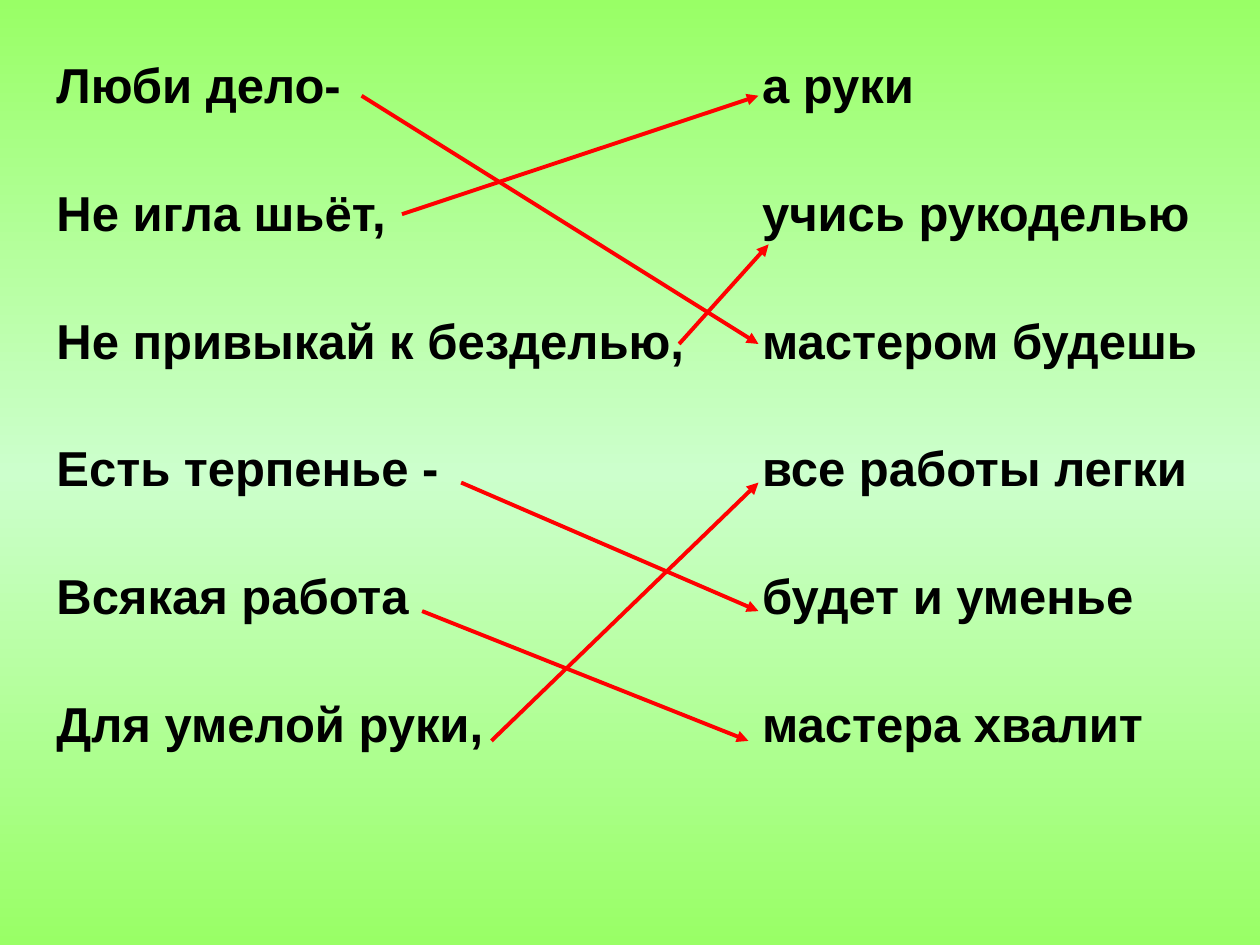
from dataclasses import dataclass

from lxml.etree import SubElement
from pptx import Presentation
from pptx.dml.color import RGBColor
from pptx.enum.shapes import MSO_CONNECTOR
from pptx.oxml.ns import qn
from pptx.slide import Slide
from pptx.util import Inches, Pt


@dataclass(frozen=True)
class Theme:
    font: str = "Arial"
    text_size: float = 28
    text: str = "000000"
    arrow: str = "FF0000"
    arrow_width: float = 2.25
    edge: str = "99FF66"
    middle: str = "CCFFCC"


@dataclass(frozen=True)
class Proverb:
    beginning: str
    ending: str


@dataclass(frozen=True)
class Match:
    start: tuple[float, float]
    end: tuple[float, float]


THEME = Theme()
ENDING_TAB = 5.6
ROW_GAP = 42.7

PROVERBS = [
    Proverb("Люби дело-", "а руки"),
    Proverb("Не игла шьёт,", "учись рукоделью"),
    Proverb("Не привыкай к безделью,", "мастером будешь"),
    Proverb("Есть терпенье -", "все работы легки"),
    Proverb("Всякая работа", "будет и уменье"),
    Proverb("Для умелой руки,", "мастера хвалит"),
]

MATCHES = [
    Match((2.87, 0.76), (6.02, 2.73)),
    Match((3.9, 5.88), (6.02, 3.83)),
    Match((3.35, 4.85), (5.94, 5.88)),
    Match((3.66, 3.83), (6.02, 4.85)),
    Match((3.19, 1.7), (6.02, 0.76)),
    Match((5.39, 2.73), (6.1, 1.94)),
]


def paint_background(slide: Slide) -> None:
    fill = slide.background.fill
    fill.gradient()
    fill.gradient_angle = 270
    stops = slide.element.find(".//" + qn("a:gsLst"))
    for stop in list(stops):
        stops.remove(stop)
    for percent, color in ((0, THEME.edge), (50, THEME.middle), (100, THEME.edge)):
        stop = SubElement(stops, qn("a:gs"), pos=str(percent * 1000))
        SubElement(stop, qn("a:srgbClr"), val=color)


def write_proverbs(slide: Slide, proverbs: list[Proverb]) -> None:
    box = slide.shapes.add_textbox(Inches(0.35), Inches(0.44), Inches(9.34), Inches(6.46))
    frame = box.text_frame
    frame.word_wrap = True
    for row, proverb in enumerate(proverbs):
        paragraph = frame.add_paragraph() if row else frame.paragraphs[0]
        paragraph.text = f"{proverb.beginning}\t{proverb.ending}"
        paragraph.line_spacing = 0.9
        if row:
            paragraph.space_before = Pt(ROW_GAP)
        tabs = SubElement(paragraph._p.get_or_add_pPr(), qn("a:tabLst"))
        SubElement(tabs, qn("a:tab"), pos=str(Inches(ENDING_TAB)), algn="l")
        paragraph.font.name = THEME.font
        paragraph.font.size = Pt(THEME.text_size)
        paragraph.font.bold = True
        paragraph.font.color.rgb = RGBColor.from_string(THEME.text)


def draw_match(slide: Slide, match: Match) -> None:
    ends = [Inches(value) for value in match.start + match.end]
    arrow = slide.shapes.add_connector(MSO_CONNECTOR.STRAIGHT, *ends)
    arrow.line.color.rgb = RGBColor.from_string(THEME.arrow)
    arrow.line.width = Pt(THEME.arrow_width)
    SubElement(arrow.line._get_or_add_ln(), qn("a:tailEnd"), type="triangle")
    SubElement(arrow._element.spPr, qn("a:effectLst"))


def main() -> None:
    presentation = Presentation()
    presentation.slide_width = Inches(10)
    presentation.slide_height = Inches(7.5)
    slide = presentation.slides.add_slide(presentation.slide_layouts[6])
    paint_background(slide)
    write_proverbs(slide, PROVERBS)
    for match in MATCHES:
        draw_match(slide, match)
    presentation.save("out.pptx")


if __name__ == "__main__":
    main()
